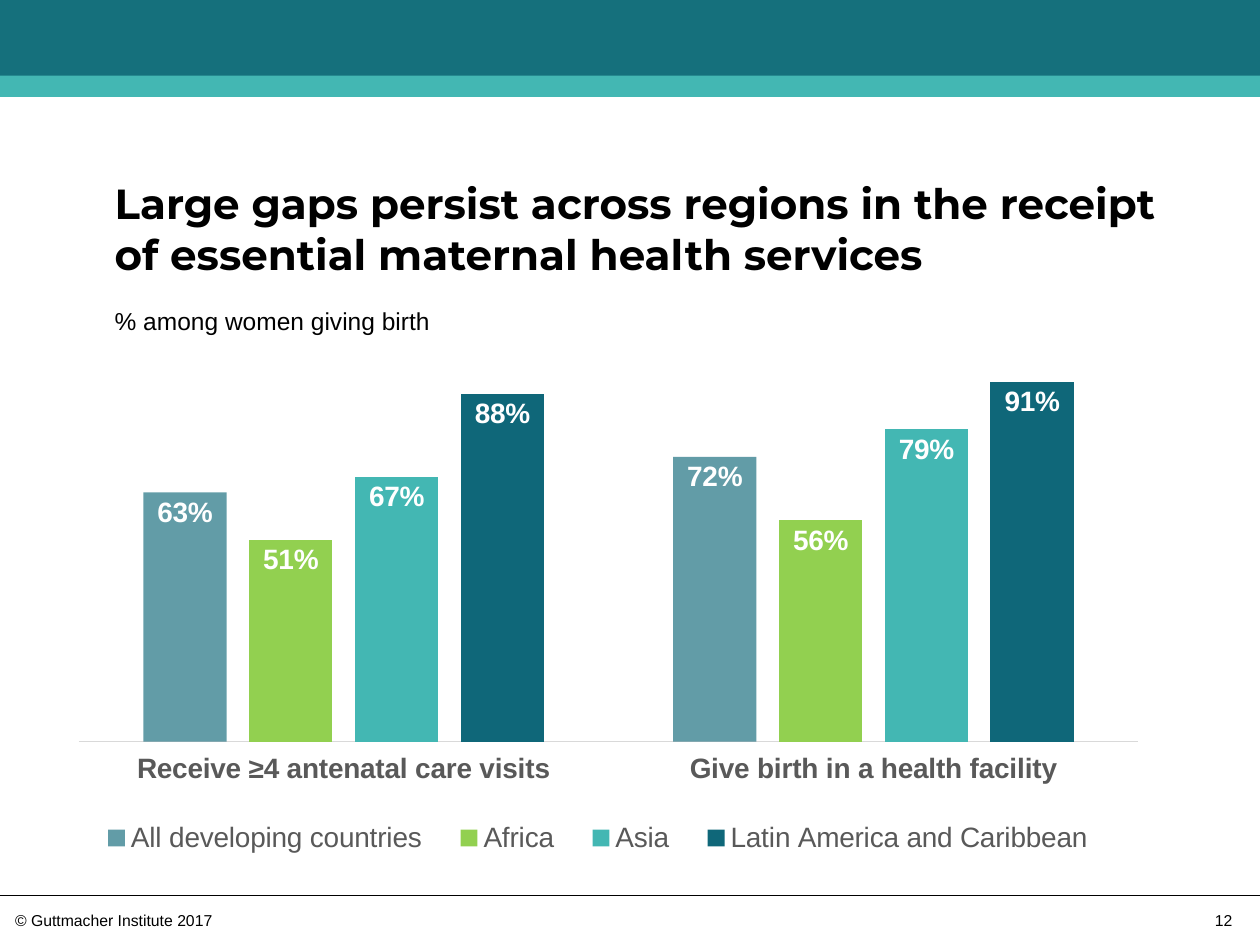
from lxml import etree
from pptx import Presentation
from pptx.chart.data import CategoryChartData
from pptx.dml.color import RGBColor
from pptx.enum.chart import (XL_CHART_TYPE, XL_LABEL_POSITION, XL_LEGEND_POSITION,
                             XL_TICK_LABEL_POSITION, XL_TICK_MARK)
from pptx.enum.shapes import MSO_CONNECTOR, MSO_SHAPE
from pptx.enum.text import MSO_ANCHOR, MSO_AUTO_SIZE, PP_ALIGN
from pptx.oxml import parse_xml
from pptx.oxml.ns import nsdecls, qn
from pptx.util import Inches, Pt

COLUMNS = XL_CHART_TYPE.COLUMN_CLUSTERED
INSIDE_END = XL_LABEL_POSITION.INSIDE_END
NO_TICK = XL_TICK_MARK.NONE
LEFT, RIGHT = PP_ALIGN.LEFT, PP_ALIGN.RIGHT

# Content
TITLE = "Large gaps persist across regions in the receipt of essential maternal health services"
SUBTITLE = "% among women giving birth"
COPYRIGHT = "© Guttmacher Institute 2017"
PAGE_NUMBER = "12"
CATEGORIES = ["Receive ≥4 antenatal care visits", "Give birth in a health facility"]
SERIES = [  # name, values, colour, opacity in percent
    ("All developing countries", (0.63, 0.72), "navy", 65),
    ("Africa", (0.51, 0.56), "green", 100),
    ("Asia", (0.67, 0.79), "aqua", 100),
    ("Latin America and Caribbean", (0.88, 0.91), "navy", 100),
]
COLORS = {"band": "15707C", "aqua": "43B7B3", "navy": "0F6779", "green": "92D050",
          "text": "000000", "label": "595959", "axis": "D9D9D9", "white": "FFFFFF"}
BODY_FONT, TITLE_FONT = "Arial", "Montserrat"

# Geometry in inches
WIDTH, HEIGHT = 10, 7.5
MARGIN, TEXT_WIDTH = 0.91, 8.53
BANDS = [(0, 0.77, "band"), (0.6, 0.17, "aqua")]  # top, height, colour
FOOTER_TOP = 7.11
CHART_BOX = (0.54, 2.61, 8.5, 4.44)
PLOT_SHARE = (0.01, 0.031, 0.99, 0.707)  # left, top, width, height of the chart
LEGEND_SHARE = (0.01, 0.86, 0.97, 0.1)


def color(name):
    return RGBColor.from_string(COLORS[name])


def style(font, size, name, bold=False, face=BODY_FONT):
    font.size, font.bold, font.name = Pt(size), bold, face
    font.color.rgb = color(name)


def fill_text(shape, text, size, align=LEFT, bold=False, face=BODY_FONT, inset=0):
    frame = shape.text_frame
    frame.word_wrap = True
    frame.auto_size = MSO_AUTO_SIZE.NONE
    frame.margin_left = frame.margin_right = Inches(inset)
    frame.margin_top = frame.margin_bottom = Inches(inset / 2)
    para = frame.paragraphs[0]
    para.alignment = align
    span = para.add_run()
    span.text = text
    style(span.font, size, "text", bold, face)


def add_text(slide, bounds, text, size, **options):
    box = slide.shapes.add_textbox(*map(Inches, bounds))
    fill_text(box, text, size, **options)


def layout_xml(shares, inner=False):
    target = '<c:layoutTarget val="inner"/>' if inner else ""
    modes = "".join(f'<c:{key}Mode val="edge"/>' for key in "xy")
    places = "".join(f'<c:{key} val="{share}"/>' for key, share in zip("xywh", shares))
    return parse_xml(f'<c:layout {nsdecls("c")}><c:manualLayout>{target}{modes}{places}'
                     '</c:manualLayout></c:layout>')


def place(element, layout, position):
    for old in element.findall(qn("c:layout")):
        element.remove(old)
    element.insert(position, layout)


def add_frame(slide):
    for top, height, name in BANDS:
        band = slide.shapes.add_shape(MSO_SHAPE.RECTANGLE, 0, Inches(top),
                                      Inches(WIDTH), Inches(height))
        band.shadow.inherit = False
        band.fill.solid()
        band.fill.fore_color.rgb = color(name)
        band.line.fill.background()
    rule = slide.shapes.add_connector(MSO_CONNECTOR.STRAIGHT, 0, Inches(FOOTER_TOP),
                                      Inches(WIDTH), Inches(FOOTER_TOP))
    rule.line.color.rgb = color("text")
    rule.line.width = Pt(0.75)
    etree.SubElement(rule._element.spPr, qn("a:effectLst"))
    add_text(slide, (0.12, 7.23, 1.84, 0.15), COPYRIGHT, 9)
    add_text(slide, (9.43, 7.18, 0.45, 0.25), PAGE_NUMBER, 9, align=RIGHT, inset=0.1)


def add_service_chart(slide):
    data = CategoryChartData(number_format="0%")
    data.categories = CATEGORIES
    for name, values, _, _ in SERIES:
        data.add_series(name, values)
    chart = slide.shapes.add_chart(COLUMNS, *map(Inches, CHART_BOX), data).chart
    chart.has_title = False
    style(chart.font, 16, "text")

    # Columns and their labels
    plot = chart.plots[0]
    plot.gap_width, plot.overlap, plot.vary_by_categories = 155, -27, False
    for series, (_, _, name, opacity) in zip(plot.series, SERIES):
        series.format.fill.solid()
        series.format.fill.fore_color.rgb = color(name)
        if opacity < 100:
            shade = series.format.fill._xPr.find(".//" + qn("a:srgbClr"))
            etree.SubElement(shade, qn("a:alpha"), val=str(opacity * 1000))
        labels = series.data_labels
        labels.show_value = True
        labels.position = INSIDE_END
        labels.number_format, labels.number_format_is_linked = "0%", False
        style(labels.font, 16, "white", bold=True)

    # Axes
    regions, values = chart.category_axis, chart.value_axis
    regions.major_tick_mark = regions.minor_tick_mark = NO_TICK
    regions.tick_label_position = XL_TICK_LABEL_POSITION.LOW
    regions.format.line.color.rgb = color("axis")
    regions.format.line.width = Pt(0.75)
    style(regions.tick_labels.font, 16, "label", bold=True)
    values.minimum_scale, values.maximum_scale = 0, 1
    values.has_major_gridlines = False
    values.visible = False

    # Legend and layout
    chart.has_legend = True
    legend = chart.legend
    legend.position = XL_LEGEND_POSITION.BOTTOM
    legend.include_in_layout = False
    style(legend.font, 16, "label")
    place(legend._element, layout_xml(LEGEND_SHARE), 1)
    plot_area = chart._chartSpace.chart.plotArea
    place(plot_area, layout_xml(PLOT_SHARE, inner=True), 0)


def main():
    deck = Presentation()
    deck.slide_width, deck.slide_height = Inches(WIDTH), Inches(HEIGHT)
    slide = deck.slides.add_slide(deck.slide_layouts[5])
    add_frame(slide)

    title = slide.shapes.title
    title.left, title.top = Inches(MARGIN), Inches(1.46)
    title.width, title.height = Inches(TEXT_WIDTH), Inches(0.75)
    fill_text(title, TITLE, 24, bold=True, face=TITLE_FONT)
    title.text_frame.vertical_anchor = MSO_ANCHOR.BOTTOM

    add_text(slide, (MARGIN, 2.43, TEXT_WIDTH, 0.4), SUBTITLE, 14)
    add_service_chart(slide)
    deck.save("out.pptx")


if __name__ == "__main__":
    main()
